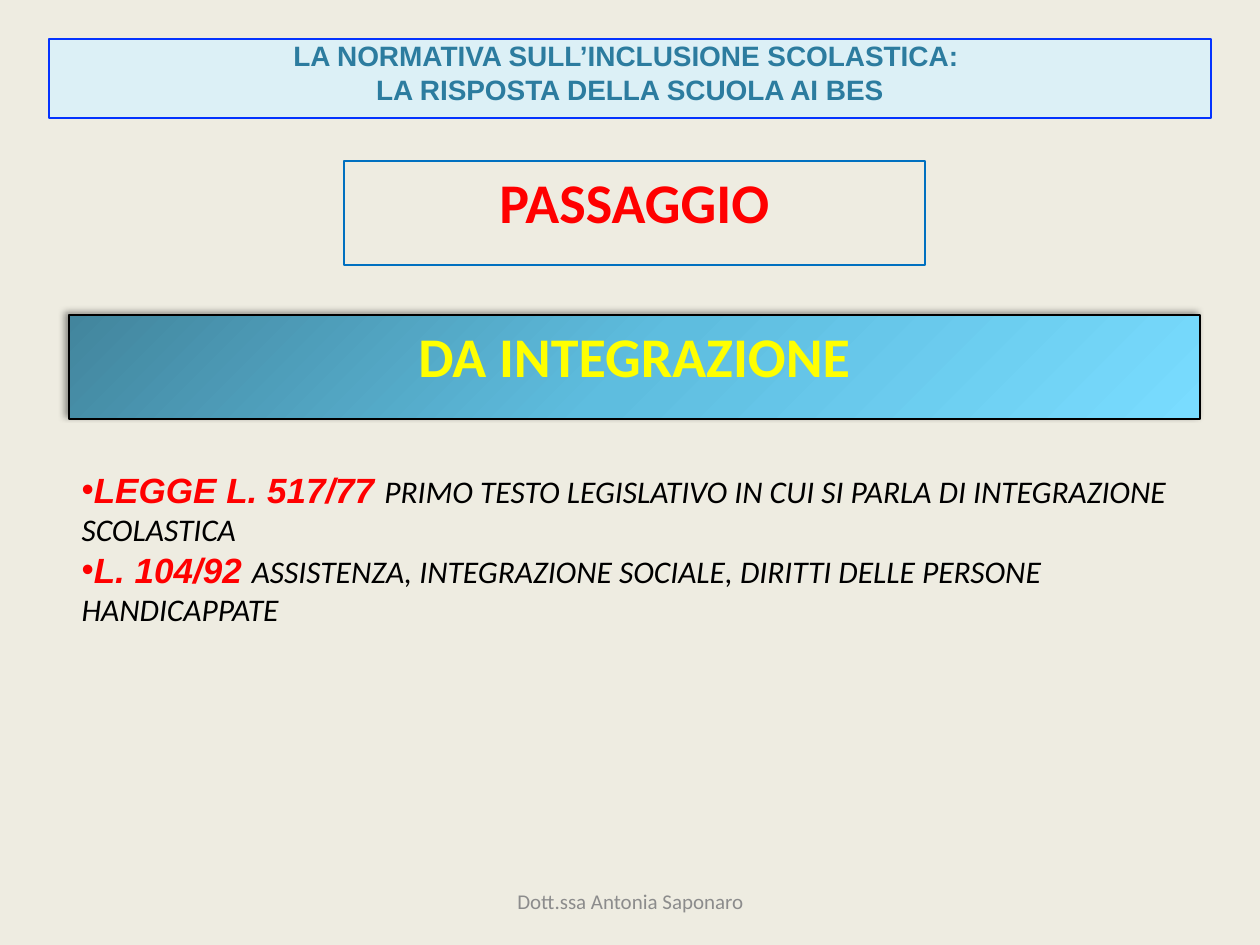
from dataclasses import dataclass
from typing import NamedTuple

from lxml.etree import SubElement
from pptx import Presentation
from pptx.dml.color import RGBColor
from pptx.enum.shapes import MSO_SHAPE as Shape
from pptx.enum.text import MSO_ANCHOR as Anchor, MSO_AUTO_SIZE as AutoSize, PP_ALIGN as Align
from pptx.oxml import parse_xml
from pptx.oxml.ns import nsdecls, qn
from pptx.util import Emu, Pt

EMU_PER_PX = 914400 / 126


@dataclass(frozen=True)
class Theme:
    background: str = "EEECE1"
    header_fill: str = "DCF0F6"
    header_line: str = "0433FF"
    header_text: str = "2C7C9F"
    passage_line: str = "0070C0"
    accent: str = "FF0000"
    highlight: str = "FFFF00"
    dark: str = "000000"
    muted: str = "8C8C8C"
    gradient: tuple = ((0, "42859D"), (50, "5EBDDF"), (100, "79DCFF"))
    sans: str = "Arial"
    body: str = "Calibri"
    banner_size: int = 32
    law_size: int = 20
    text_size: int = 18
    header_size: int = 16
    footer_size: int = 12


class Box(NamedTuple):
    left: int
    top: int
    width: int
    height: int


class Law(NamedTuple):
    name: str
    subject: str


T = Theme()
HEADER = ("LA NORMATIVA SULL’INCLUSIONE SCOLASTICA: ", "LA RISPOSTA DELLA SCUOLA AI BES")
LAWS = (
    Law("LEGGE L. 517/77 ", "PRIMO TESTO LEGISLATIVO IN CUI SI PARLA DI INTEGRAZIONE SCOLASTICA"),
    Law("L. 104/92 ", "ASSISTENZA, INTEGRAZIONE SOCIALE, DIRITTI DELLE PERSONE HANDICAPPATE"),
)


def px(n: int) -> Emu:
    return Emu(round(n * EMU_PER_PX))


def place(sp, box: Box) -> None:
    sp.left, sp.top, sp.width, sp.height = map(px, box)


def outline(sp, color: str) -> None:
    sp.line.color.rgb = RGBColor.from_string(color)
    sp.line.width = Pt(0.75)


def set_frame(sp, anchor=Anchor.TOP):
    tf = sp.text_frame
    tf.word_wrap = True
    tf.auto_size = AutoSize.NONE
    tf.vertical_anchor = anchor
    return tf


def add_run(p, text: str, *, size: int, color: str, font: str = T.body,
            bold: bool = False, italic: bool = False) -> None:
    r = p.add_run()
    r.text = text
    f = r.font
    f.name, f.size, f.bold, f.italic = font, Pt(size), bold, italic
    f.color.rgb = RGBColor.from_string(color)


def add_paragraph(tf, index: int, align=Align.LEFT):
    p = tf.paragraphs[0] if index == 0 else tf.add_paragraph()
    p.alignment = align
    p.space_before = Pt(0)
    return p


def set_bullet(p, color: str) -> None:
    """Give the paragraph a bullet directly before its text, with no hanging indent."""
    pPr = p._p.get_or_add_pPr()
    pPr.set("marL", "0")
    pPr.set("indent", "0")
    clr = SubElement(pPr, qn("a:buClr"))
    SubElement(clr, qn("a:srgbClr"), val=color)
    SubElement(pPr, qn("a:buFont"), typeface=T.sans)
    SubElement(pPr, qn("a:buChar"), char="•")


def add_banner(s, box: Box, text: str, text_color: str, line_color: str):
    sp = s.shapes.add_shape(Shape.RECTANGLE, *map(px, box))
    sp.shadow.inherit = False
    sp.fill.background()
    outline(sp, line_color)
    p = add_paragraph(set_frame(sp), 0, Align.CENTER)
    p.space_before = Pt(T.banner_size * 0.2)
    add_run(p, text, size=T.banner_size, color=text_color, bold=True)
    return sp


def shade(sp) -> None:
    """Fill with the diagonal gradient and add a soft shadow towards the top left."""
    stops = "".join(f'<a:gs pos="{pos * 1000}"><a:srgbClr val="{color}"/></a:gs>'
                    for pos, color in T.gradient)
    spPr = sp._element.spPr
    spPr.replace(spPr.find(qn("a:noFill")), parse_xml(
        f'<a:gradFill {nsdecls("a")} rotWithShape="1"><a:gsLst>{stops}</a:gsLst>'
        '<a:lin ang="2700000" scaled="0"/></a:gradFill>'))
    spPr.find(qn("a:effectLst")).append(parse_xml(
        f'<a:outerShdw {nsdecls("a")} blurRad="{Pt(4)}" dist="{Pt(3)}" dir="13500000">'
        f'<a:srgbClr val="{T.dark}"><a:alpha val="40000"/></a:srgbClr></a:outerShdw>'))


def fill_header(sp) -> None:
    place(sp, Box(49, 39, 1162, 79))
    sp.fill.solid()
    sp.fill.fore_color.rgb = RGBColor.from_string(T.header_fill)
    outline(sp, T.header_line)
    tf = set_frame(sp)
    tf.margin_left = tf.margin_right = tf.margin_top = tf.margin_bottom = 0
    for i, line in enumerate(HEADER):
        add_run(add_paragraph(tf, i, Align.CENTER), line, size=T.header_size,
                color=T.header_text, font=T.sans, bold=True)


def fill_laws(sp) -> None:
    place(sp, Box(69, 462, 1123, 212))
    tf = set_frame(sp)
    for i, law in enumerate(LAWS):
        p = add_paragraph(tf, i)
        set_bullet(p, T.accent)
        add_run(p, law.name, size=T.law_size, color=T.accent, font=T.sans, bold=True, italic=True)
        add_run(p, law.subject, size=T.text_size, color=T.dark, italic=True)


def add_footer(s) -> None:
    sp = s.shapes.add_textbox(*map(px, Box(431, 876, 399, 50)))
    p = add_paragraph(set_frame(sp, Anchor.MIDDLE), 0, Align.CENTER)
    add_run(p, "Dott.ssa Antonia Saponaro", size=T.footer_size, color=T.muted)


def main() -> None:
    prs = Presentation()
    prs.slide_width, prs.slide_height = px(1260), px(945)
    s = prs.slides.add_slide(prs.slide_layouts[1])
    s.background.fill.solid()
    s.background.fill.fore_color.rgb = RGBColor.from_string(T.background)

    fill_header(s.shapes.title)
    add_banner(s, Box(344, 161, 581, 104), "PASSAGGIO", T.accent, T.passage_line)
    shade(add_banner(s, Box(69, 315, 1131, 104), "DA INTEGRAZIONE", T.highlight, T.dark))
    fill_laws(s.placeholders[1])
    add_footer(s)
    prs.save("out.pptx")


if __name__ == "__main__":
    main()
